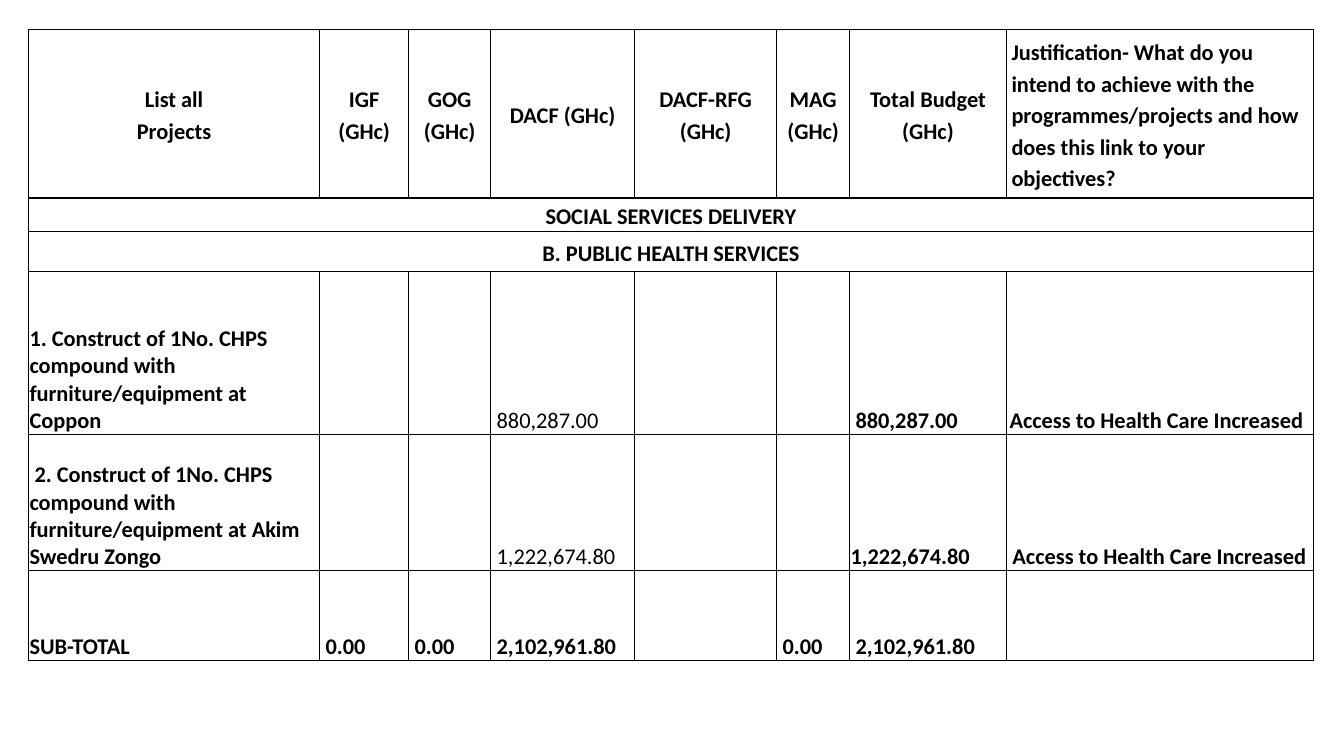
import pptx
import pptx.util
import pptx.dml.color
import pptx.enum.text
import pptx.oxml
import pptx.oxml.ns

Pt = pptx.util.Pt
Align = pptx.enum.text.PP_ALIGN
Anchor = pptx.enum.text.MSO_ANCHOR

# Table content
HEADINGS = [
    "List all\nProjects", "IGF (GHc)", "GOG (GHc)", "DACF (GHc)",
    "DACF-RFG (GHc)", "MAG (GHc)", "Total Budget (GHc)",
    "Justification- What do you intend to achieve with the "
    "programmes/projects and how does this link to your objectives?",
]
SECTIONS = ["SOCIAL SERVICES DELIVERY", "B. PUBLIC HEALTH SERVICES"]
OUTCOME = "Access to Health Care Increased"
PROJECTS = [
    ["1. Construct of 1No. CHPS compound with furniture/equipment at Coppon",
     "", "", "880,287.00", "", "", "880,287.00", OUTCOME],
    ["2. Construct of 1No. CHPS compound with furniture/equipment at Akim Swedru Zongo",
     "", "", "1,222,674.80", "", "", "1,222,674.80", OUTCOME],
    ["SUB-TOTAL", "0.00", "0.00", "2,102,961.80", "", "0.00", "2,102,961.80", ""],
]
COLUMN_WIDTHS = [207.9, 63.6, 58.6, 102.9, 101.4, 52.1, 112.1, 219.3]
ROW_HEIGHTS = [120.2, 23.8, 28.8, 116.6, 97.2, 64.1]
DACF, JUSTIFICATION = 3, 7
FLUSH_CELLS = {(0, 0), (0, JUSTIFICATION), (1, 6), (2, 0)}


def colour(hex_code):
    return pptx.dml.color.RGBColor.from_string(hex_code)


class BudgetSlide:
    font, size, ink, paper = "Calibri", 16, "000000", "FFFFFF"

    def __init__(self, deck):
        self.slide = deck.slides.add_slide(deck.slide_layouts[6])

    def table(self, left, top, widths, heights):
        frame = self.slide.shapes.add_table(
            len(heights), len(widths), Pt(left), Pt(top),
            Pt(sum(widths)), Pt(sum(heights)))
        grid = frame.table
        grid.first_row = grid.horz_banding = False
        for column, width in zip(grid.columns, widths):
            column.width = Pt(width)
        for row, height in zip(grid.rows, heights):
            row.height = Pt(height)
        for cell in grid.iter_cells():
            cell.fill.solid()
            cell.fill.fore_color.rgb = colour(self.paper)
            self.borders(cell)
        return grid

    def borders(self, cell):
        properties = cell._tc.get_or_add_tcPr()
        for position, side in enumerate(("lnL", "lnR", "lnT", "lnB")):
            properties.insert(position, pptx.oxml.parse_xml(
                f'<a:{side} {pptx.oxml.ns.nsdecls("a")} w="{Pt(1)}"><a:solidFill>'
                f'<a:srgbClr val="{self.ink}"/></a:solidFill></a:{side}>'))

    def entry(self, cell, text, anchor, side_margin, align=Align.LEFT,
              spacing=1.0, indent=0, bold=True):
        cell.vertical_anchor = anchor
        cell.margin_left = cell.margin_right = Pt(side_margin)
        cell.margin_top = cell.margin_bottom = 0
        cell.text_frame.text = text
        for paragraph in cell.text_frame.paragraphs:
            paragraph.alignment = align
            paragraph.line_spacing = spacing
            paragraph._p.get_or_add_pPr().set("indent", str(Pt(indent)))
            for run in paragraph.runs:
                run.font.name = self.font
                run.font.size = Pt(self.size)
                run.font.bold = bold
                run.font.color.rgb = colour(self.ink)

    def heading(self, cell, text, align=Align.CENTER):
        self.entry(cell, text, Anchor.MIDDLE, 3.6, align, 1.15)


def main():
    deck = pptx.Presentation()
    deck.slide_width, deck.slide_height = Pt(960), Pt(540)
    page = BudgetSlide(deck)
    budget = page.table(20.4, 21.2, COLUMN_WIDTHS, ROW_HEIGHTS)

    # Column headings
    for column, text in enumerate(HEADINGS):
        align = Align.LEFT if column == JUSTIFICATION else Align.CENTER
        page.heading(budget.cell(0, column), text, align)

    # Section bands
    for row, text in enumerate(SECTIONS, start=1):
        budget.cell(row, 0).merge(budget.cell(row, len(HEADINGS) - 1))
        page.heading(budget.cell(row, 0), text)

    # Projects and subtotal
    for number, project in enumerate(PROJECTS):
        for column, text in enumerate(project):
            margin = 2.2 if (number, column) == (0, JUSTIFICATION) else 0.7
            indent = 0 if (number, column) in FLUSH_CELLS else 3.6
            bold = column != DACF or number == len(PROJECTS) - 1
            page.entry(budget.cell(number + 3, column), text, Anchor.BOTTOM,
                       margin, indent=indent, bold=bold)

    deck.save("out.pptx")


if __name__ == "__main__":
    main()
